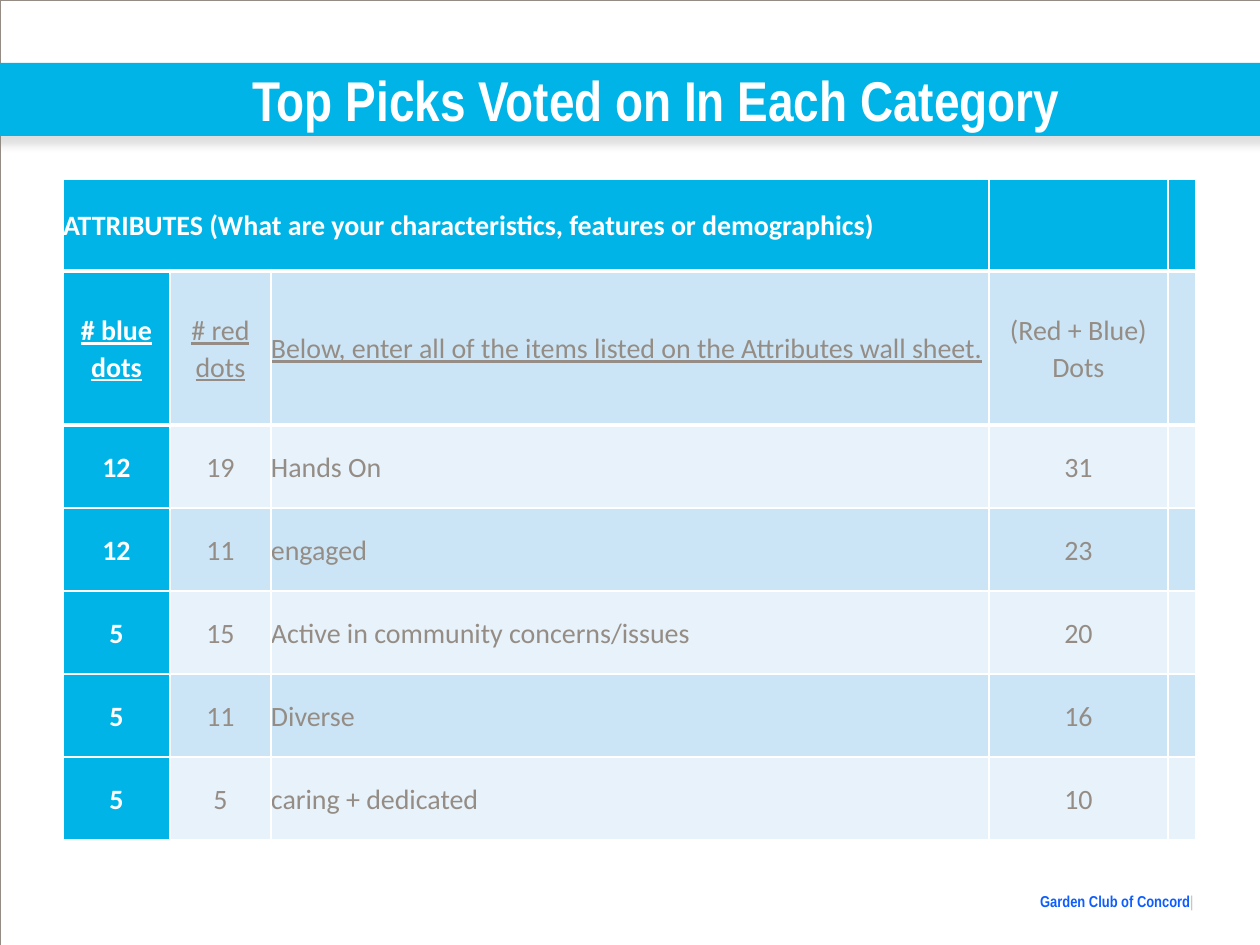
"""Build the slide listing the top voted attributes."""
from lxml import etree
from pptx import Presentation
from pptx import util as u
from pptx.dml.color import RGBColor
from pptx.enum import shapes, text
from pptx.oxml import parse_xml
from pptx.oxml.ns import nsdecls, qn

PX = 914400 / 126
COLORS = {"cyan": "01B4E7", "gray": "958D85", "white": "FFFFFF", "light": "E7F2FA",
          "medium": "CBE5F6", "blue": "0E5EFF", "silver": "BCBDC0", "shadow": "808080"}
COL_WIDTHS = [107, 101, 718, 179, 28]
ROW_HEIGHTS = [92, 154] + [83] * 5
ROWS = [
    ["ATTRIBUTES (What are your characteristics, features or demographics)", "", "", "", ""],
    ["# blue dots", "# red dots",
     "Below, enter all of the items listed on the Attributes wall sheet.", "(Red + Blue) Dots", ""],
    ["12", "19", "Hands On", "31", ""],
    ["12", "11", "engaged", "23", ""],
    ["5", "15", "Active in community concerns/issues", "20", ""],
    ["5", "11", "Diverse", "16", ""],
    ["5", "5", "caring + dedicated", "10", ""],
]


def px(*lengths):
    return [u.Emu(round(n * PX)) for n in lengths]


def set_font(font, name, size, color, bold):
    font.name, font.size, font.bold = name, u.Pt(size), bold
    font.color.rgb = RGBColor.from_string(COLORS[color])


prs = Presentation()
prs.slide_width, prs.slide_height = px(1260, 945)
s = prs.slides.add_slide(prs.slide_layouts[5])

footer = s.shapes.add_textbox(*px(976, 892, 221, 18))
tf = footer.text_frame
tf.word_wrap = True
tf.margin_left = tf.margin_top = tf.margin_right = tf.margin_bottom = 0
p = tf.paragraphs[0]
p.alignment = text.PP_ALIGN.RIGHT
for words, color in [("Garden Club of Concord", "blue"), ("| ", "silver")]:
    r = p.add_run()
    r.text = words
    set_font(r.font, "Arial Narrow", 9, color, color == "blue")

frame = s.shapes.add_shape(shapes.MSO_SHAPE.RECTANGLE, *px(0, 0, 1260, 945))
frame.shadow.inherit = False
frame.fill.background()
frame.line.color.rgb = RGBColor.from_string(COLORS["gray"])
frame.line.width = u.Pt(0.25)

band = s.shapes.add_shape(shapes.MSO_SHAPE.RECTANGLE, *px(-10, 63, 1281, 73))
band.shadow.inherit = False
band.fill.solid()
band.fill.fore_color.rgb = RGBColor.from_string(COLORS["cyan"])
band.line.fill.background()
effects = band._element.spPr.find(qn("a:effectLst"))
shadow = etree.SubElement(effects, qn("a:outerShdw"), blurRad=str(u.Pt(5)),
                          dist=str(u.Pt(4.8)), dir="5400000", algn="t", rotWithShape="0")
shade = etree.SubElement(shadow, qn("a:srgbClr"), val=COLORS["shadow"])
etree.SubElement(shade, qn("a:alpha"), val="25000")

title = s.shapes.title
s.shapes._spTree.append(title._element)
title.left, title.top, title.width, title.height = px(53, 63, 1207, 73)
tf = title.text_frame
tf.text = "Top Picks Voted on In Each Category"
tf.auto_size = text.MSO_AUTO_SIZE.NONE
tf.vertical_anchor = text.MSO_ANCHOR.MIDDLE
tf.margin_left = tf.margin_top = tf.margin_right = tf.margin_bottom = 0
p = tf.paragraphs[0]
p.alignment = text.PP_ALIGN.CENTER
set_font(p.font, "Arial Narrow", 32, "white", True)

table = s.shapes.add_table(len(ROWS), len(COL_WIDTHS),
                           *px(63, 179, sum(COL_WIDTHS), sum(ROW_HEIGHTS))).table
table.first_col = True
for column, width in zip(table.columns, px(*COL_WIDTHS)):
    column.width = width
for row, height in zip(table.rows, px(*ROW_HEIGHTS)):
    row.height = height
table.cell(0, 0).merge(table.cell(0, 2))

for i, values in enumerate(ROWS):
    for j, value in enumerate(values):
        cell = table.cell(i, j)
        header = i == 0 or j == 0
        cell.fill.solid()
        fill = "cyan" if header else "medium" if i % 2 else "light"
        cell.fill.fore_color.rgb = RGBColor.from_string(COLORS[fill])
        cell.vertical_anchor = text.MSO_ANCHOR.MIDDLE
        cell.margin_left = cell.margin_top = cell.margin_right = cell.margin_bottom = 0
        widths = {"lnL": 1, "lnR": 1, "lnT": 3 if i in (1, 2) else 1, "lnB": 3 if i < 2 else 1}
        for k, (side, width) in enumerate(widths.items()):
            cell._tc.tcPr.insert(k, parse_xml(
                f'<a:{side} {nsdecls("a")} w="{u.Pt(width)}"><a:solidFill>'
                f'<a:srgbClr val="{COLORS["white"]}"/></a:solidFill></a:{side}>'))
        if value:
            cell.text = value
            p = cell.text_frame.paragraphs[0]
            p.line_spacing = 1.07
            left = i == 0 or j == 2
            p.alignment = text.PP_ALIGN.LEFT if left else text.PP_ALIGN.CENTER
            set_font(p.font, "Calibri", 16, "white" if header else "gray", header)
            p.font.underline = i == 1 and j < 3

prs.save("out.pptx")
